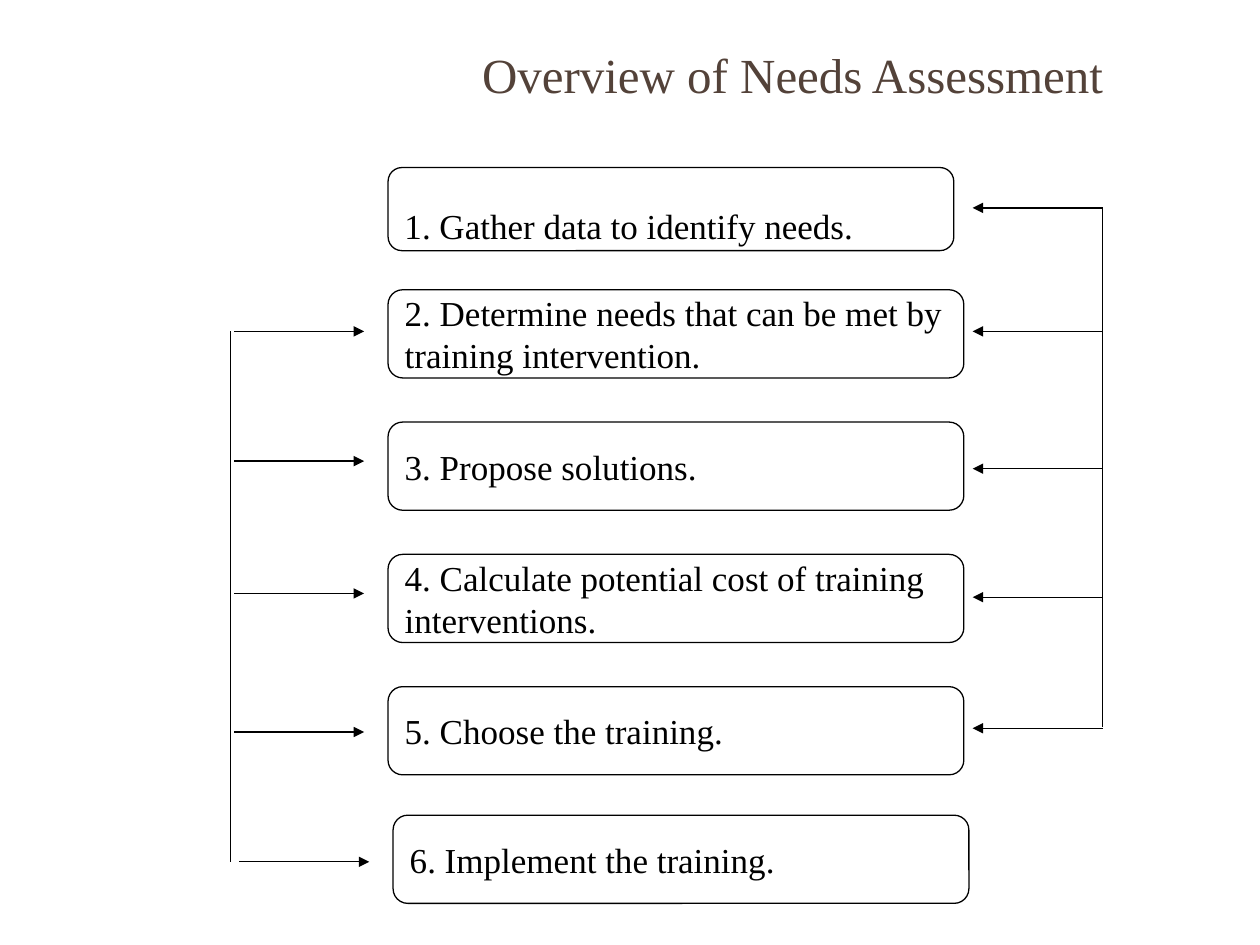
from lxml.etree import SubElement
from pptx import Presentation
from pptx.dml.color import RGBColor
from pptx.enum.shapes import MSO_CONNECTOR as Connector, MSO_SHAPE as Shape
from pptx.enum.text import MSO_ANCHOR as Anchor, PP_ALIGN as Align
from pptx.oxml.ns import qn
from pptx.util import Inches, Pt

COLORS = {"title": "534239", "ink": "000000", "paper": "FFFFFF"}
BOX_LEFT, BOX_WIDTH, BOX_HEIGHT = 3.08, 4.57, 0.7
LEFT_RAIL, RIGHT_RAIL, ARROW_LENGTH = 1.83, 8.75, 1.03


class FlowPage:
    """Draws the titled steps and feedback arrows in one style."""

    def __init__(self, deck):
        self.page = deck.slides.add_slide(deck.slide_layouts[6])
        self.font = "Times New Roman"

    def color(self, name):
        return RGBColor.from_string(COLORS[name])

    def set_text(self, shape, text, size, color, align, anchor):
        frame = shape.text_frame
        frame.text = text
        frame.word_wrap = True
        frame.vertical_anchor = anchor
        para = frame.paragraphs[0]
        para.alignment = align
        for span in para.runs:
            span.font.name = self.font
            span.font.size = Pt(size)
            span.font.color.rgb = self.color(color)
        return frame

    def title(self, text, left, top, width, height):
        box = self.page.shapes.add_textbox(
            Inches(left), Inches(top), Inches(width), Inches(height))
        self.set_text(box, text, 28, "title", Align.CENTER, Anchor.MIDDLE)

    def step(self, text, top, left=BOX_LEFT, width=BOX_WIDTH,
             height=BOX_HEIGHT, anchor=Anchor.MIDDLE):
        box = self.page.shapes.add_shape(
            Shape.ROUNDED_RECTANGLE,
            Inches(left), Inches(top), Inches(width), Inches(height))
        box.shadow.inherit = False
        box.fill.solid()
        box.fill.fore_color.rgb = self.color("paper")
        box.line.color.rgb = self.color("ink")
        box.line.width = Pt(0.75)
        frame = self.set_text(box, text, 20, "ink", Align.LEFT, anchor)
        if anchor == Anchor.BOTTOM:
            frame.margin_bottom = 0

    def line(self, start, end, arrow=False):
        link = self.page.shapes.add_connector(
            Connector.STRAIGHT, *(Inches(value) for value in (*start, *end)))
        link.line.color.rgb = self.color("ink")
        link.line.width = Pt(0.75)
        properties = link.element.spPr
        if arrow:
            SubElement(properties.find(qn("a:ln")), qn("a:tailEnd"), type="triangle")
        SubElement(properties, qn("a:effectLst"))

    def arrow(self, start_x, y, length):
        self.line((start_x, y), (start_x + length, y), arrow=True)


def main():
    deck = Presentation()
    deck.slide_width, deck.slide_height = Inches(10), Inches(7.5)
    flow = FlowPage(deck)
    flow.title("Overview of Needs Assessment", 2.58, 0.25, 7.42, 0.67)

    flow.step("1. Gather data to identify needs.", 1.33,
              width=4.49, height=0.66, anchor=Anchor.BOTTOM)
    middle_steps = (
        "2. Determine needs that can be met by training intervention.",
        "3. Propose solutions.",
        "4. Calculate potential cost of training interventions.",
        "5. Choose the training.",
    )
    for index, text in enumerate(middle_steps):
        flow.step(text, 2.3 + 1.05 * index)
    flow.step("6. Implement the training.", 6.47, left=3.12)

    for y in (1.65, 2.63, 3.72, 4.74, 5.78):
        flow.arrow(RIGHT_RAIL, y, -ARROW_LENGTH)
    for y in (2.63, 3.66, 4.71, 5.81):
        flow.arrow(LEFT_RAIL + 0.03, y, ARROW_LENGTH)
    flow.arrow(LEFT_RAIL + 0.07, 6.84, ARROW_LENGTH)
    flow.line((RIGHT_RAIL, 1.65), (RIGHT_RAIL, 5.77))
    flow.line((LEFT_RAIL, 2.63), (LEFT_RAIL, 6.84))

    deck.save("out.pptx")


if __name__ == "__main__":
    main()
